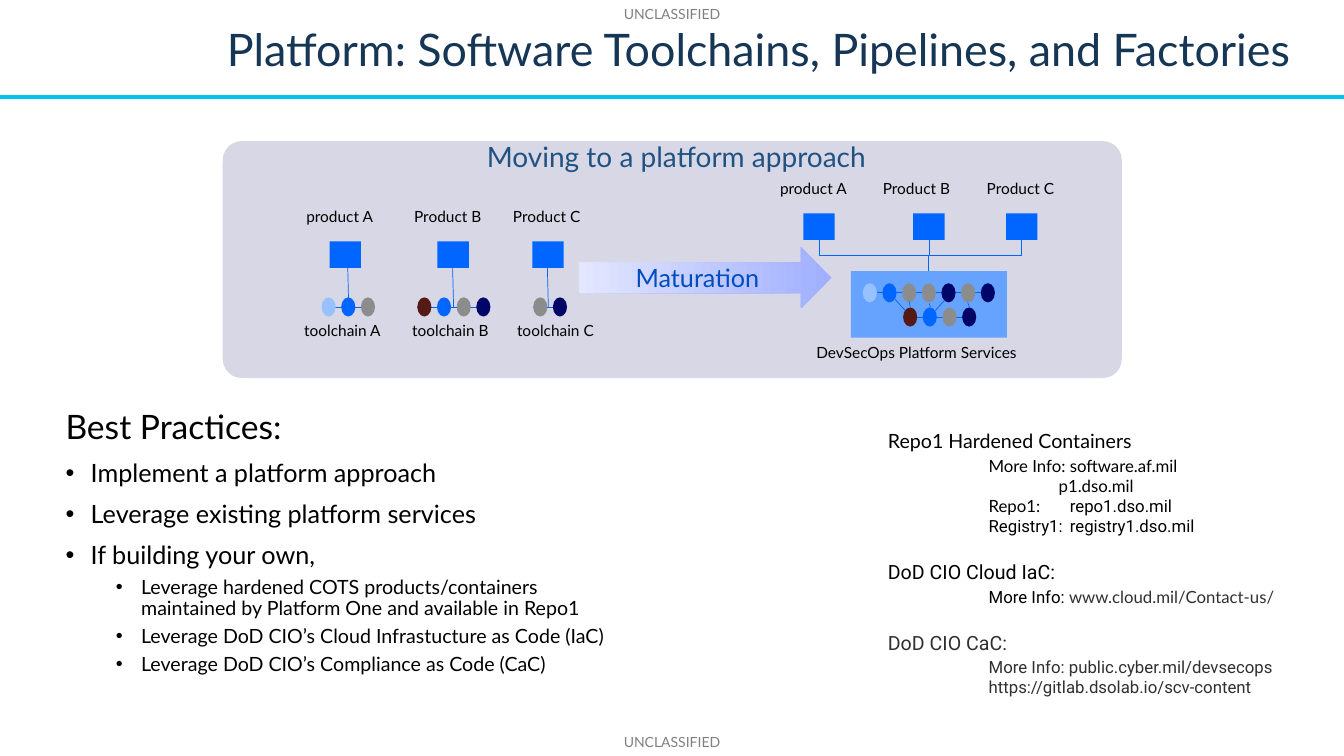
"""Build the slide on software toolchains, pipelines and factories."""
from dataclasses import dataclass

from lxml import etree
from pptx import Presentation
from pptx.dml.color import RGBColor
from pptx.enum import shapes, text
from pptx.oxml import ns
from pptx.util import Pt


@dataclass(frozen=True)
class Theme:
    """Colours, fonts and type sizes."""
    font: str = "Lato"
    mono: str = "Roboto"
    black: str = "000000"
    title: str = "163656"
    head: str = "205282"
    word: str = "004CBF"
    mark: str = "808080"
    link: str = "303030"
    rule: str = "00C4EC"
    panel: str = "D7D7E5"
    base: str = "66A3FF"
    blue: str = "0066FF"
    sky: str = "98C2FF"
    grey: str = "8C8C8C"
    rust: str = "561A16"
    navy: str = "000567"
    dark: str = "A0AFFF"
    light: str = "E3E7FF"
    huge: int = 32
    large: int = 24
    lead: int = 20
    body: int = 18
    sub: int = 14
    note: int = 12
    tag: int = 11
    small: int = 10


T = Theme()
KIND = shapes.MSO_SHAPE
LINK = shapes.MSO_CONNECTOR
ALIGN = text.PP_ALIGN
STEP, DOT_W, DOT_H = 14.05, 10.1, 13.7
BOX_W, BOX_H = 22.5, 18.9


def rgb(code):
    """Return a colour from its hex code."""
    return RGBColor.from_string(code)


def write(frame, *parts, size=T.tag, color=T.black, font=T.font, align=ALIGN.LEFT,
          line=1.0, gap=0, left=0, hang=0, mark=None, level=0):
    """Add a paragraph; a part is a string or a (string, font, color) tuple."""
    first = not frame.paragraphs[0].runs
    para = frame.paragraphs[0] if first else frame.add_paragraph()
    para.level, para.alignment, para.line_spacing = level, align, line
    para.space_before = Pt(0 if first else gap)
    props = para._p.get_or_add_pPr()
    props.set("marL", str(Pt(left)))
    props.set("indent", str(Pt(-hang)))
    if mark:
        etree.SubElement(props, ns.qn("a:buChar")).set("char", mark)
    else:
        etree.SubElement(props, ns.qn("a:buNone"))
    for part in parts:
        words, face, tint = (part, font, color) if isinstance(part, str) else part
        run = para.add_run()
        run.text = words
        run.font.name, run.font.size = face, Pt(size)
        run.font.color.rgb = rgb(tint)


def place(holder, x, y, w, h, anchor):
    """Move a placeholder and return its text frame."""
    holder.left, holder.top, holder.width, holder.height = map(Pt, (x, y, w, h))
    frame = holder.text_frame
    frame.auto_size, frame.vertical_anchor = text.MSO_AUTO_SIZE.NONE, anchor
    return frame


def label(slide, x, y, w, h, *parts, inset=True, **style):
    """Add a text box and return its text frame."""
    frame = slide.shapes.add_textbox(*map(Pt, (x, y, w, h))).text_frame
    frame.word_wrap = True
    if not inset:
        frame.margin_left = frame.margin_right = 0
        frame.margin_top = frame.margin_bottom = 0
    if parts:
        write(frame, *parts, **style)
    return frame


def block(slide, kind, x, y, w, h, color=None):
    """Add a flat shape without outline."""
    shape = slide.shapes.add_shape(kind, *map(Pt, (x, y, w, h)))
    shape.shadow.inherit = False
    shape.line.fill.background()
    if color:
        shape.fill.solid()
        shape.fill.fore_color.rgb = rgb(color)
    return shape


def wire(slide, x1, y1, x2, y2, color=T.blue, width=0.5, kind=LINK.STRAIGHT):
    """Add a plain connector."""
    line = slide.shapes.add_connector(kind, *map(Pt, (x1, y1, x2, y2)))
    line.line.color.rgb, line.line.width = rgb(color), Pt(width)
    etree.SubElement(line._element.spPr, ns.qn("a:effectLst"))
    return line


def elbow(slide, x1, y1, x2, y2):
    """Add a bent connector that leaves downward."""
    mid_x, mid_y = (x1 + x2) / 2, (y1 + y2) / 2
    right = x2 > x1
    dx = (y2 - y1) / 2 * (1 if right else -1)
    dy = abs(x2 - x1) / 2
    line = wire(slide, mid_x + dx, mid_y - dy, mid_x - dx, mid_y + dy, kind=LINK.ELBOW)
    turn = 270 if right else 90
    line._element.spPr.find(ns.qn("a:xfrm")).set("rot", str(turn * 60000))


def chain(slide, x, y, colors):
    """Draw a row of tools joined by a line."""
    mid = y + DOT_H / 2
    wire(slide, x, mid, x + STEP * (len(colors) - 1) + DOT_W, mid)
    for i, color in enumerate(colors):
        block(slide, KIND.OVAL, x + i * STEP, y, DOT_W, DOT_H, color)


def product(slide, name, x, y, name_x):
    """Draw a product box below its name."""
    block(slide, KIND.RECTANGLE, x, y, BOX_W, BOX_H, T.blue)
    label(slide, name_x, y - 28.3, 70.6, 20.9, name)


def before(slide):
    """Draw the three separate toolchains."""
    rows = [("product A", "A", 235.4, 211.7, 210.2, 229.7, 248.4, [T.sky, T.blue, T.grey]),
            ("Product B", "B", 312.5, 288.7, 287.3, 298.1, 323.3,
             [T.rust, T.blue, T.grey, T.navy]),
            ("Product C", "C", 380.2, 359.3, 362.2, 380.9, 391, [T.grey, T.navy])]
    for name, key, x, name_x, tool_x, dot_x, line_x, colors in rows:
        chain(slide, dot_x, 212.4, colors)
        product(slide, name, x, 172.5, name_x)
        label(slide, tool_x, 226.1, 78.5, 20.9, f"toolchain {key}")
        wire(slide, line_x, 191.2, line_x + 0.7, 219.4)


def after(slide):
    """Draw the shared platform and its products."""
    block(slide, KIND.RECTANGLE, 607.7, 193.7, 111.6, 47.5, T.base)
    chain(slide, 616.3, 202.3, [T.sky, T.blue, T.grey, T.grey, T.navy, T.grey, T.navy])
    chain(slide, 645.1, 219.6, [T.rust, T.blue, T.grey, T.navy])
    for ends in [(639.4, 213.8, 646.6, 221.8), (663.8, 216.7, 664.6, 219.6),
                 (691.2, 216, 692.6, 219.6), (674.6, 214.6, 668.2, 221.8),
                 (649.4, 215.3, 650.2, 219.6)]:
        wire(slide, *ends)
    label(slide, 576, 241.2, 177.1, 20.9, "DevSecOps Platform Services")
    for name, x, name_x in [("product A", 573.8, 550.1), ("Product B", 652.3, 623.5),
                            ("Product C", 718.6, 697.7)]:
        product(slide, name, x, 152.4, name_x)
        elbow(slide, x + BOX_W / 2, 152.4 + BOX_H, 663.2, 193.7)


def growth(slide):
    """Draw the arrow between the two states."""
    arrow = block(slide, KIND.RIGHT_ARROW, 413.3, 176.4, 180.7, 43.9)
    arrow.fill.gradient()
    arrow.fill.gradient_angle = 180
    for stop, color in zip(arrow.fill.gradient_stops, (T.dark, T.light)):
        stop.color.rgb = rgb(color)
    arrow.text_frame.vertical_anchor = text.MSO_ANCHOR.MIDDLE
    write(arrow.text_frame, "Maturation", size=T.body, color=T.word, align=ALIGN.CENTER)


def advice(frame):
    """Fill the list of best practices."""
    write(frame, "Best Practices:", size=T.large, line=0.9)
    for item in ["Implement a platform approach", "Leverage existing platform services",
                 "If building your own,"]:
        write(frame, item, size=T.body, line=0.9, gap=10, left=18, hang=18, mark="•")
    for item in ["Leverage hardened COTS products/containers maintained by Platform One "
                 "and available in Repo1",
                 "Leverage DoD CIO’s Cloud Infrastucture as Code (IaC)",
                 "Leverage DoD CIO’s Compliance as Code (CaC)"]:
        write(frame, item, size=T.sub, line=0.9, gap=5, left=54, hang=18, mark="•", level=1)


def sources(slide):
    """List where to find more information."""
    frame = label(slide, 627.1, 303.1, 300, 220.3)
    info = dict(size=T.note, left=72)
    pair = dict(size=T.note, left=130, hang=58)
    write(frame, "Repo1 Hardened Containers", size=T.sub)
    write(frame, "More Info: software.af.mil", gap=2, **info)
    write(frame, "p1.dso.mil", size=T.note, left=122)
    write(frame, "Repo1:\t", ("repo1.dso.mil", T.mono, T.black), **pair)
    write(frame, "Registry1:\tregistry1.dso.mil", font=T.mono, **pair)
    write(frame, "DoD CIO Cloud IaC:", size=T.sub, font=T.mono, gap=17)
    write(frame, "More Info: ", ("www.cloud.mil/Contact-us/", T.font, T.link),
          font=T.mono, gap=2, **info)
    late = dict(font=T.mono, color=T.link)
    write(frame, "DoD CIO CaC:", size=T.sub, gap=17, **late)
    write(frame, "More Info: public.cyber.mil/devsecops", gap=2, **late, **info)
    write(frame, "https://gitlab.dsolab.io/scv-content", **late, **info)


def main():
    """Build and save the slide."""
    deck = Presentation()
    deck.slide_width, deck.slide_height = Pt(960), Pt(540)
    slide = deck.slides.add_slide(deck.slide_layouts[1])
    title, body = slide.placeholders
    wire(slide, 0, 69.1, 960, 69.1, T.rule, 3)
    for y in (5, 525):
        label(slide, 0, y, 960, 11.5, "UNCLASSIFIED", inset=False, size=T.small,
              color=T.mark, align=ALIGN.CENTER, line=0.93)
    write(place(title, 154.8, 15.8, 798.5, 42.5, text.MSO_ANCHOR.MIDDLE),
          "Platform: Software Toolchains, Pipelines, and Factories",
          size=T.huge, color=T.title, line=0.9)
    advice(place(body, 39.6, 289.4, 421.2, 223.2, text.MSO_ANCHOR.TOP))
    panel = block(slide, KIND.ROUNDED_RECTANGLE, 159.1, 100.8, 642.2, 169.2, T.panel)
    panel.adjustments[0] = 0.08
    before(slide)
    after(slide)
    growth(slide)
    label(slide, 340.6, 95.8, 286.6, 31.7, "Moving to a platform approach",
          size=T.lead, color=T.head)
    sources(slide)
    deck.save("out.pptx")


if __name__ == "__main__":
    main()
